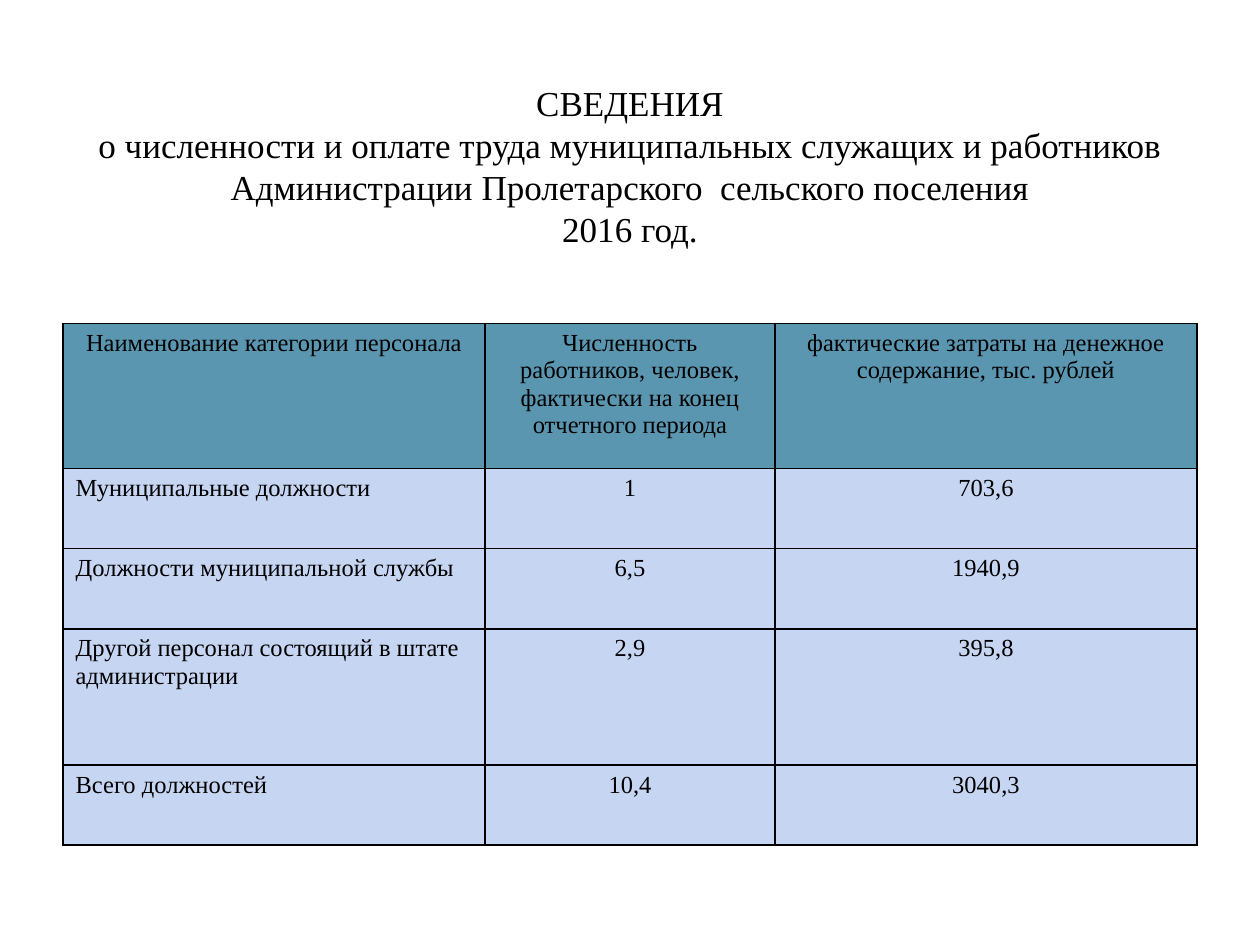
from lxml.etree import SubElement
from pptx import Presentation
from pptx.dml.color import RGBColor
from pptx.enum.text import MSO_ANCHOR, PP_ALIGN
from pptx.oxml.ns import qn
from pptx.util import Pt

BLACK = RGBColor(0x00, 0x00, 0x00)
HEADER_BLUE = RGBColor(0x5B, 0x96, 0xB1)
BODY_BLUE = RGBColor(0xC6, 0xD5, 0xF2)

TITLE = (
    "СВЕДЕНИЯ\v"
    "о численности и оплате труда муниципальных служащих и работников "
    "Администрации Пролетарского  сельского поселения\v"
    "2016 год."
)
STAFF_ROWS = [
    ("Наименование категории персонала",
     "Численность работников, человек,\nфактически на конец отчетного периода",
     "фактические затраты на денежное содержание, тыс. рублей"),
    ("Муниципальные должности", "1", "703,6"),
    ("Должности муниципальной службы", "6,5", "1940,9"),
    ("Другой персонал состоящий в штате администрации", "2,9", "395,8"),
    ("Всего должностей", "10,4", "3040,3"),
]
COLUMN_WIDTHS = [241.2, 165.6, 241.2]
ROW_HEIGHTS = [82.8, 45.8, 45.8, 77.8, 45.8]


class SlideBuilder:
    font_name = "Times New Roman"
    title_size = Pt(20)
    table_size = Pt(14)
    border_width = Pt(1)

    def __init__(self, slide):
        self.slide = slide

    def format_text(self, text_frame, size, alignment):
        for paragraph in text_frame.paragraphs:
            paragraph.alignment = alignment
            for run in paragraph.runs:
                run.font.name = self.font_name
                run.font.size = size
                run.font.color.rgb = BLACK

    def add_title(self, text, left, top, width, height):
        shape = self.slide.shapes.add_textbox(Pt(left), Pt(top), Pt(width), Pt(height))
        text_frame = shape.text_frame
        text_frame.word_wrap = True
        text_frame.vertical_anchor = MSO_ANCHOR.MIDDLE
        text_frame.text = text
        self.format_text(text_frame, self.title_size, PP_ALIGN.CENTER)

    def add_borders(self, cell):
        properties = cell._tc.get_or_add_tcPr()
        for side in ("lnL", "lnR", "lnT", "lnB"):
            line = SubElement(properties, qn(f"a:{side}"), w=str(self.border_width))
            fill = SubElement(line, qn("a:solidFill"))
            SubElement(fill, qn("a:srgbClr"), val=str(BLACK))

    def add_table(self, rows, left, top, column_widths, row_heights):
        table = self.slide.shapes.add_table(
            len(rows), len(column_widths), Pt(left), Pt(top),
            Pt(sum(column_widths)), Pt(sum(row_heights))).table
        for column, width in zip(table.columns, column_widths):
            column.width = Pt(width)
        for row, height in zip(table.rows, row_heights):
            row.height = Pt(height)

        for row_index, texts in enumerate(rows):
            is_header = row_index == 0
            for column_index, text in enumerate(texts):
                cell = table.cell(row_index, column_index)
                cell.text_frame.text = text
                centred = is_header or column_index > 0
                self.format_text(cell.text_frame, self.table_size,
                                 PP_ALIGN.CENTER if centred else PP_ALIGN.LEFT)
                self.add_borders(cell)
                cell.fill.solid()
                cell.fill.fore_color.rgb = HEADER_BLUE if is_header else BODY_BLUE


def main():
    presentation = Presentation()
    presentation.slide_width = Pt(720)
    presentation.slide_height = Pt(540)
    builder = SlideBuilder(presentation.slides.add_slide(presentation.slide_layouts[6]))

    # Heading
    builder.add_title(TITLE, 36, 21.6, 648, 146.2)

    # Staff numbers and pay
    builder.add_table(STAFF_ROWS, 36, 185, COLUMN_WIDTHS, ROW_HEIGHTS)

    presentation.save("out.pptx")


if __name__ == "__main__":
    main()
